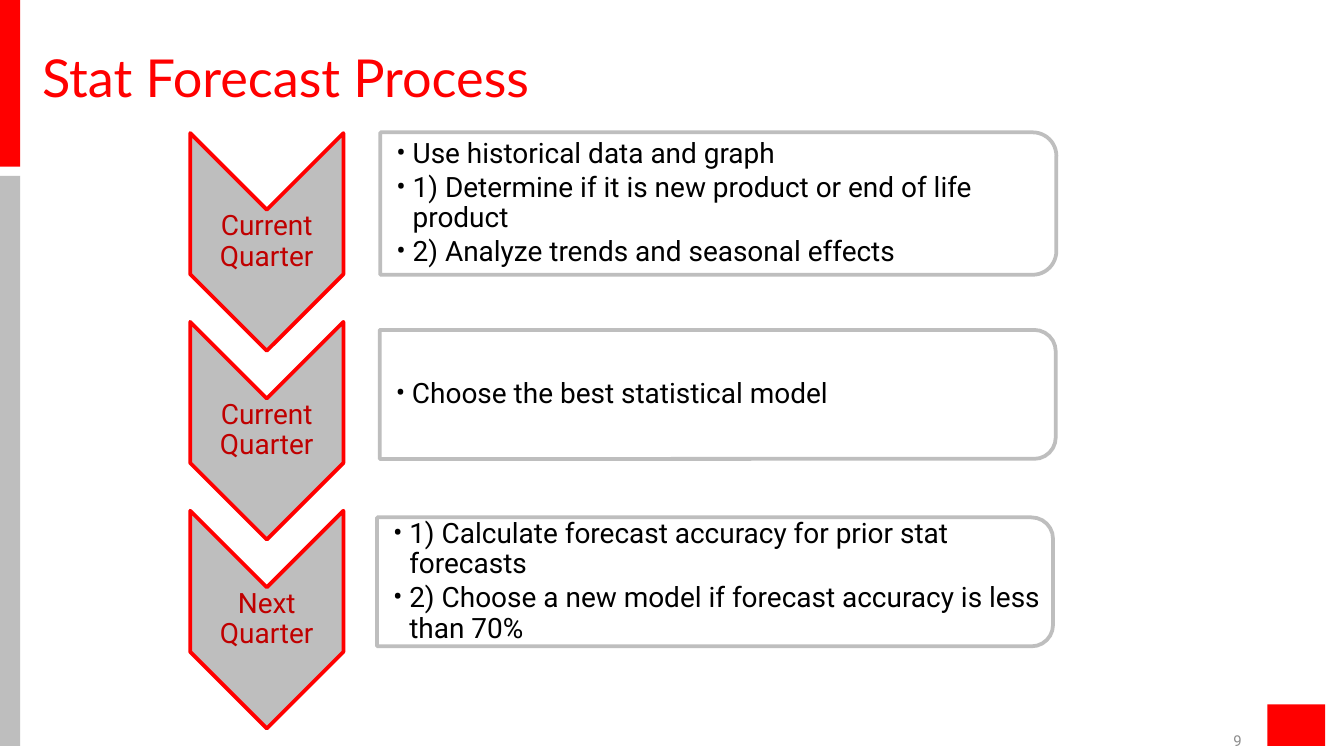
import collections
import dataclasses

import lxml.etree
import pptx
import pptx.dml.color
import pptx.enum.shapes
import pptx.enum.text
import pptx.oxml.ns
import pptx.util

SHAPE = pptx.enum.shapes.MSO_SHAPE
ALIGN = pptx.enum.text.PP_ALIGN
ANCHOR = pptx.enum.text.MSO_ANCHOR
COLUMNS, ROWS = 100, 56.25
CELL = pptx.util.Inches(0.1)

Box = collections.namedtuple("Box", "x y w h")
Step = collections.namedtuple("Step", "label points panel")


@dataclasses.dataclass(frozen=True)
class Theme:
    red: str = "FF0000"
    grey: str = "BEBEBE"
    white: str = "FFFFFF"
    label: str = "C00000"
    body: str = "000000"
    muted: str = "8C8C8C"
    heading_font: str = "Lato"
    body_font: str = "Roboto"
    bullet_font: str = "Roboto"
    title_size: int = 28
    text_size: int = 15
    number_size: int = 8
    line_width: int = 2


THEME = Theme()
CHEVRON_WIDTH, CHEVRON_HEIGHT = 11.4, 16.2
STEP_PITCH = 14.05
STEPS = [
    Step("Current Quarter",
         ["Use historical data and graph",
          "1) Determine if it is new product or end of life product",
          "2) Analyze trends and seasonal effects"],
         Box(14.15, -0.05, 50.3, 10.6)),
    Step("Current Quarter",
         ["Choose the best statistical model"],
         Box(14.1, 0.6, 50.3, 9.6)),
    Step("Next Quarter",
         ["1) Calculate forecast accuracy for prior stat forecasts",
          "2) Choose a new model if forecast accuracy is less than 70%"],
         Box(13.9, 0.5, 50.3, 9.6)),
]


def rgb(colour):
    return pptx.dml.color.RGBColor.from_string(colour)


def within(box, x, y, w, h):
    return Box(box.x + x, box.y + y, w, h)


def emu(box):
    return [round(v * CELL) for v in box]


def add_shape(slide, kind, box, fill, line=None):
    s = slide.shapes.add_shape(kind, *emu(box))
    s.shadow.inherit = False
    s.fill.solid()
    s.fill.fore_color.rgb = rgb(fill)
    if line:
        s.line.color.rgb = rgb(line)
        s.line.width = pptx.util.Pt(THEME.line_width)
    else:
        s.line.fill.background()
    return s


def add_turned(slide, kind, box, fill, line):
    shift = (box.w - box.h) / 2
    s = add_shape(slide, kind, within(box, shift, -shift, box.h, box.w), fill, line)
    s.rotation = 90
    return s


def add_text(slide, box, lines, font, size, colour, anchor, align=ALIGN.LEFT,
             spacing=0.9, insets=None, bullets=False):
    tf = slide.shapes.add_textbox(*emu(box)).text_frame
    tf.word_wrap = True
    tf.vertical_anchor = anchor
    if insets:
        (tf.margin_left, tf.margin_top,
         tf.margin_right, tf.margin_bottom) = map(pptx.util.Inches, insets)
    for i, line in enumerate(lines):
        p = tf.paragraphs[0] if i == 0 else tf.add_paragraph()
        if bullets:
            add_bullet(p)
        p.alignment = align
        p.line_spacing = spacing
        if i < len(lines) - 1:
            p.space_after = pptx.util.Pt(2)
        r = p.add_run()
        r.text = line
        r.font.name = font
        r.font.size = pptx.util.Pt(size)
        r.font.color.rgb = rgb(colour)


def add_bullet(p):
    pPr = p._p.get_or_add_pPr()
    indent = pptx.util.Inches(0.12)
    pPr.set("marL", str(indent))
    pPr.set("indent", str(-indent))
    font = lxml.etree.SubElement(pPr, pptx.oxml.ns.qn("a:buFont"))
    font.set("typeface", THEME.bullet_font)
    bullet = lxml.etree.SubElement(pPr, pptx.oxml.ns.qn("a:buChar"))
    bullet.set("char", "•")


def add_side_band(slide, box):
    add_shape(slide, SHAPE.RECTANGLE, within(box, 0, 0, box.w, 12.4), THEME.red)
    add_shape(slide, SHAPE.RECTANGLE, within(box, 0, 13.1, box.w, 42.4), THEME.grey)


def add_title(slide, box):
    add_text(slide, box, ["Stat Forecast Process"], THEME.heading_font,
             THEME.title_size, THEME.red, ANCHOR.BOTTOM, spacing=0.95)


def add_footer(slide, box):
    add_text(slide, within(box, 0, 2.1, 2.8, 1.3), ["9"], THEME.body_font,
             THEME.number_size, THEME.muted, ANCHOR.BOTTOM, ALIGN.RIGHT,
             spacing=1.0, insets=(0, 0, 0, 0))
    add_shape(slide, SHAPE.RECTANGLE, within(box, 4.7, 0, 4.3, 3.1), THEME.red)


def add_step(slide, box, step):
    chevron = within(box, 0, 0, CHEVRON_WIDTH, CHEVRON_HEIGHT)
    add_turned(slide, SHAPE.CHEVRON, chevron, THEME.grey, THEME.red)
    add_text(slide, within(chevron, 0, 5.65, chevron.w, 4.9), [step.label],
             THEME.body_font, THEME.text_size, THEME.label, ANCHOR.MIDDLE,
             ALIGN.CENTER, insets=(0.01, 0.01, 0.01, 0.01))
    panel = within(box, *step.panel)
    s = add_turned(slide, SHAPE.ROUND_2_SAME_RECTANGLE, panel, THEME.white, THEME.grey)
    colour = s._element.spPr.find(".//" + pptx.oxml.ns.qn("a:srgbClr"))
    lxml.etree.SubElement(colour, pptx.oxml.ns.qn("a:alpha")).set("val", "90000")
    add_text(slide, within(panel, 0, 0.45, panel.w - 0.5, panel.h - 0.9), step.points,
             THEME.body_font, THEME.text_size, THEME.body, ANCHOR.MIDDLE,
             insets=(0.12, 0.01, 0.01, 0.01), bullets=True)


def add_process(slide, box):
    for i, step in enumerate(STEPS):
        add_step(slide, within(box, 0, i * STEP_PITCH, box.w, CHEVRON_HEIGHT), step)


def main():
    prs = pptx.Presentation()
    prs.slide_width, prs.slide_height = round(COLUMNS * CELL), round(ROWS * CELL)
    slide = prs.slides.add_slide(prs.slide_layouts[6])
    add_side_band(slide, Box(0, 0, 1.5, ROWS))
    add_title(slide, Box(2.15, 3.15, 89.8, 5.5))
    add_footer(slide, Box(89.6, 52.4, 9, 3.4))
    add_process(slide, Box(14.15, 9.9, 64.5, 44.3))
    prs.save("out.pptx")


if __name__ == "__main__":
    main()
